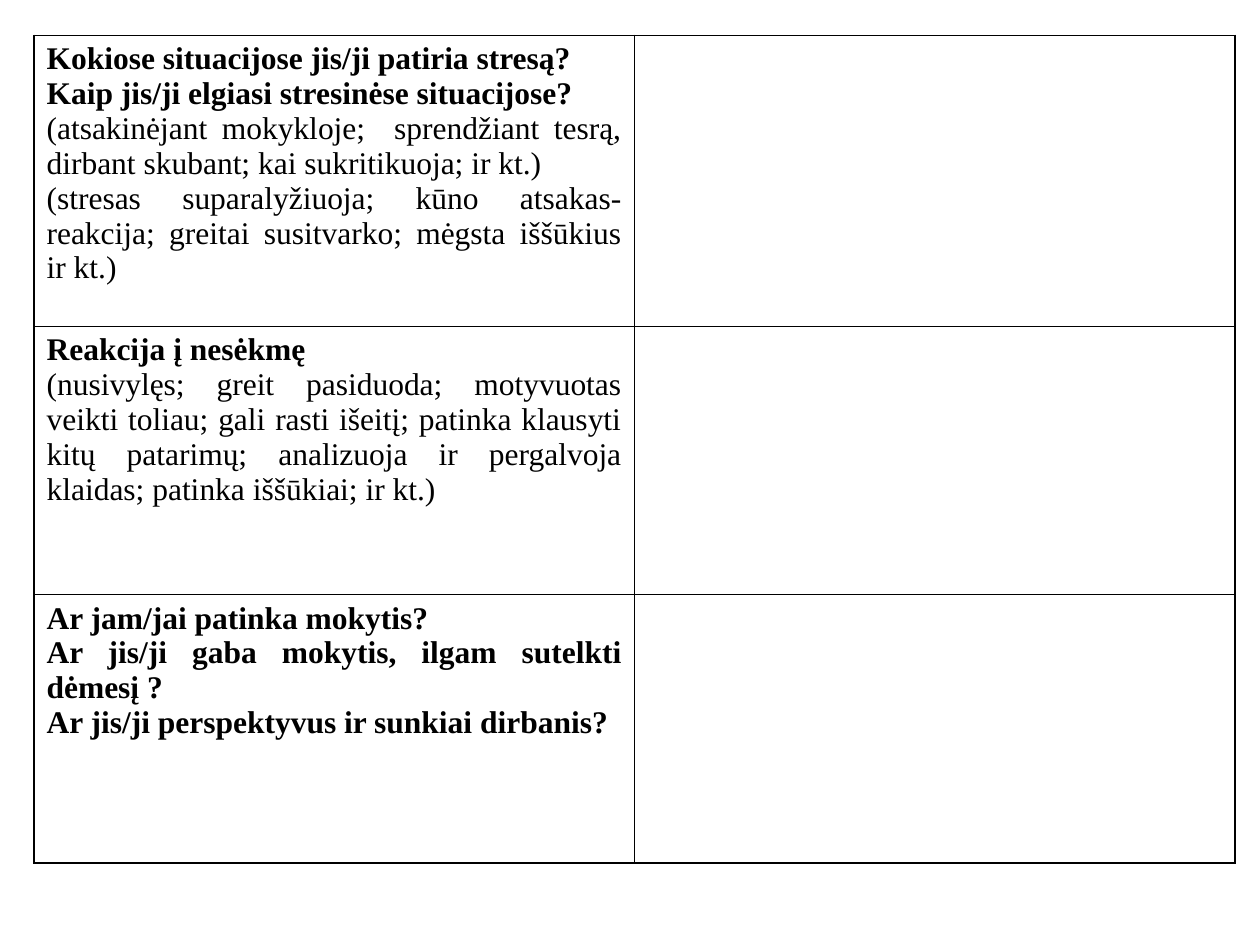
from lxml import etree
from pptx import Presentation
from pptx.dml.color import RGBColor
from pptx.enum.text import PP_ALIGN
from pptx.oxml.ns import qn
from pptx.util import Inches, Pt

JUSTIFY = PP_ALIGN.JUSTIFY
COLORS = {"text": "000000", "border": "000000", "cell": "FFFFFF"}
TEXT_FORMAT = {"name": "Times New Roman", "size": Pt(18)}
PLAIN_TABLE = {"first_row": False, "horz_banding": False}
BORDER_SIDES = ("a:lnL", "a:lnR", "a:lnT", "a:lnB")
ROW_HEIGHTS = (2.31, 2.13, 2.13)
COLUMN_COUNT = 2

QUESTIONS = [
    (
        ["Kokiose situacijose jis/ji patiria stresą? ",
         "Kaip jis/ji elgiasi stresinėse situacijose?"],
        ["(atsakinėjant mokykloje;  sprendžiant tesrą, dirbant skubant; "
         "kai sukritikuoja; ir kt.)",
         "(stresas suparalyžiuoja; kūno atsakas-reakcija; greitai susitvarko; "
         "mėgsta iššūkius ir kt.)"],
    ),
    (
        ["Reakcija į nesėkmę"],
        ["(nusivylęs; greit pasiduoda; motyvuotas veikti toliau; gali rasti "
         "išeitį; patinka klausyti kitų patarimų; analizuoja ir pergalvoja "
         "klaidas; patinka iššūkiai; ir kt.)"],
    ),
    (
        ["Ar jam/jai patinka mokytis?",
         "Ar jis/ji gaba mokytis, ilgam sutelkti dėmesį ?",
         "Ar jis/ji perspektyvus ir sunkiai dirbanis?"],
        [],
    ),
]


def apply_format(target, values):
    """Set each named attribute of the target."""
    for attribute, value in values.items():
        setattr(target, attribute, value)


def style_cell(cell):
    """Give a cell thin borders on all sides and a plain fill."""
    properties = cell._tc.get_or_add_tcPr()
    for side in BORDER_SIDES:
        border = etree.SubElement(properties, qn(side), w=str(Pt(1)))
        border_fill = etree.SubElement(border, qn("a:solidFill"))
        etree.SubElement(border_fill, qn("a:srgbClr"), val=COLORS["border"])
    cell.fill.solid()
    cell.fill.fore_color.rgb = RGBColor.from_string(COLORS["cell"])


def write_question(cell, headings, examples):
    """Write bold headings followed by regular example lines."""
    lines = [(text, True) for text in headings]
    lines += [(text, False) for text in examples]
    frame = cell.text_frame
    for index, (text, bold) in enumerate(lines):
        paragraph = frame.add_paragraph() if index else frame.paragraphs[0]
        paragraph.alignment = JUSTIFY
        run = paragraph.add_run()
        run.text = text
        apply_format(run.font, {**TEXT_FORMAT, "bold": bold})
        run.font.color.rgb = RGBColor.from_string(COLORS["text"])


def add_questionnaire(slide, left, top, width, height):
    """Place the question table with an empty answer column in the box."""
    questionnaire = slide.shapes.add_table(
        len(QUESTIONS), COLUMN_COUNT, left, top, width, height).table
    apply_format(questionnaire, PLAIN_TABLE)
    for row, row_height in zip(questionnaire.rows, ROW_HEIGHTS):
        row.height = int(height * row_height / sum(ROW_HEIGHTS))
    for cell in questionnaire.iter_cells():
        style_cell(cell)
    for index, (headings, examples) in enumerate(QUESTIONS):
        write_question(questionnaire.cell(index, 0), headings, examples)


def main():
    """Build the slide and save it."""
    presentation = Presentation()
    apply_format(presentation,
                 {"slide_width": Inches(10), "slide_height": Inches(7.5)})
    slide = presentation.slides.add_slide(presentation.slide_layouts[6])
    add_questionnaire(slide, Inches(0.27), Inches(0.28), Inches(9.53),
                      Inches(sum(ROW_HEIGHTS)))
    presentation.save("out.pptx")


if __name__ == "__main__":
    main()
